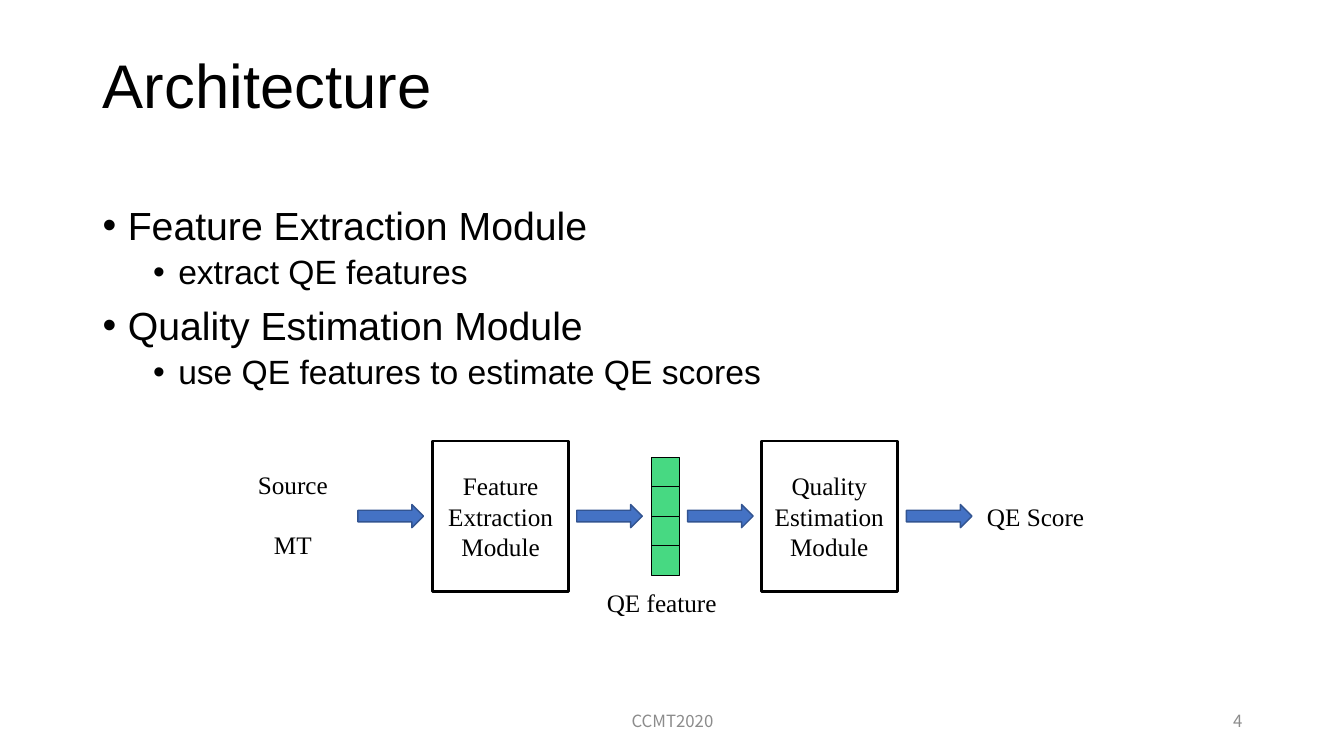
from lxml.etree import SubElement
from pptx import Presentation
from pptx.dml.color import RGBColor as Rgb
from pptx.enum.shapes import MSO_SHAPE as Kind
from pptx.enum.text import MSO_ANCHOR as Anchor, PP_ALIGN as Align
from pptx.oxml.ns import qn
from pptx.util import Inches, Pt

HEX = {"ink": "000000", "cell": "47D982", "arrow": "4472C4", "edge": "325491", "foot": "8C8C8C"}
SANS, SERIF, CJK = "Arial", "Times New Roman", "Noto Sans CJK SC"
TITLE = "Architecture"
POINTS = [
    (0, "Feature Extraction Module"),
    (1, "extract QE features"),
    (0, "Quality Estimation Module"),
    (1, "use QE features to estimate QE scores"),
]
LEVELS = [(28, 10, 0.25), (24, 5, 0.75)]
MODULES = [(4.29, "Feature Extraction Module"), (7.55, "Quality Estimation Module")]
ARROWS = [3.55, 5.72, 6.82, 8.99]
LABELS = [
    (2.4, 4.61, 1.01, 1.01, ["Source", "MT"], Align.CENTER, True),
    (5.92, 5.78, 1.35, 0.4, ["QE feature"], Align.LEFT, False),
    (9.69, 4.92, 1.25, 0.4, ["QE Score"], Align.LEFT, True),
]
FOOT = [(9.42, 3, "4", Align.RIGHT), (4.42, 4.5, "CCMT2020", Align.CENTER)]
MID = 5.12
CELLS, STACK = 4, 1.17


def color(name):
    return Rgb.from_string(HEX[name])


def write(par, text, size, face, ink="ink", align=Align.LEFT):
    par.alignment = align
    run = par.add_run()
    run.text = text
    font = run.font
    font.size, font.name = Pt(size), face
    font.color.rgb = color(ink)
    for tag in ("a:ea", "a:cs"):
        SubElement(run._r.get_or_add_rPr(), qn(tag)).set("typeface", face)


def add_box(slide, x, y, w, h, wrap=True, anchor=Anchor.TOP):
    box = slide.shapes.add_textbox(*map(Inches, (x, y, w, h)))
    frame = box.text_frame
    frame.word_wrap, frame.vertical_anchor = wrap, anchor
    return frame


def add_form(slide, kind, x, w, h, y=None, fill=None, edge="ink", width=1):
    top = MID - h / 2 if y is None else y
    form = slide.shapes.add_shape(kind, *map(Inches, (x, top, w, h)))
    form.shadow.inherit = False
    if fill:
        form.fill.solid()
        form.fill.fore_color.rgb = color(fill)
    else:
        form.fill.background()
    form.line.color.rgb = color(edge)
    form.line.width = Pt(width)
    return form


def add_title(slide):
    title = slide.shapes.title
    title.left, title.top, title.width, title.height = map(Inches, (0.92, 0.4, 7.55, 0.96))
    frame = title.text_frame
    frame.word_wrap, frame.vertical_anchor = True, Anchor.MIDDLE
    par = frame.paragraphs[0]
    par.line_spacing = 0.9
    write(par, TITLE, 44, SANS)


def add_points(slide):
    frame = add_box(slide, 0.92, 2, 11.5, 4.76)
    for i, (level, text) in enumerate(POINTS):
        size, space, left = LEVELS[level]
        par = frame.add_paragraph() if i else frame.paragraphs[0]
        par.level, par.line_spacing = level, 0.9
        par.space_before = Pt(space if i else 0)
        props = par._p.get_or_add_pPr()
        props.set("marL", str(Inches(left)))
        props.set("indent", str(Inches(-0.25)))
        SubElement(props, qn("a:buFont")).set("typeface", SANS)
        SubElement(props, qn("a:buChar")).set("char", "•")
        write(par, text, size, SANS)


def add_flow(slide):
    for x, text in MODULES:
        form = add_form(slide, Kind.RECTANGLE, x, 1.35, 1.49, width=2)
        frame = form.text_frame
        frame.word_wrap, frame.vertical_anchor = True, Anchor.MIDDLE
        write(frame.paragraphs[0], text, 18, SERIF, align=Align.CENTER)
    side = STACK / CELLS
    for i in range(CELLS):
        top = MID - STACK / 2 + i * side
        add_form(slide, Kind.RECTANGLE, 6.46, 0.28, side, top, "cell", width=0.5)
    for x in ARROWS:
        add_form(slide, Kind.RIGHT_ARROW, x, 0.65, 0.23, fill="arrow", edge="edge")
    for x, y, w, h, lines, align, wrap in LABELS:
        frame = add_box(slide, x, y, w, h, wrap)
        for i, text in enumerate(lines):
            par = frame.add_paragraph() if i else frame.paragraphs[0]
            par.space_before = Pt(20.7 if i else 0)
            write(par, text, 18, SERIF, align=align)


def main():
    deck = Presentation()
    deck.slide_width, deck.slide_height = Inches(13.33), Inches(7.5)
    slide = deck.slides.add_slide(deck.slide_layouts[5])
    add_title(slide)
    add_points(slide)
    add_flow(slide)
    for x, w, text, align in FOOT:
        frame = add_box(slide, x, 6.95, w, 0.4, anchor=Anchor.MIDDLE)
        write(frame.paragraphs[0], text, 12, CJK, "foot", align)
    deck.save("out.pptx")


if __name__ == "__main__":
    main()
